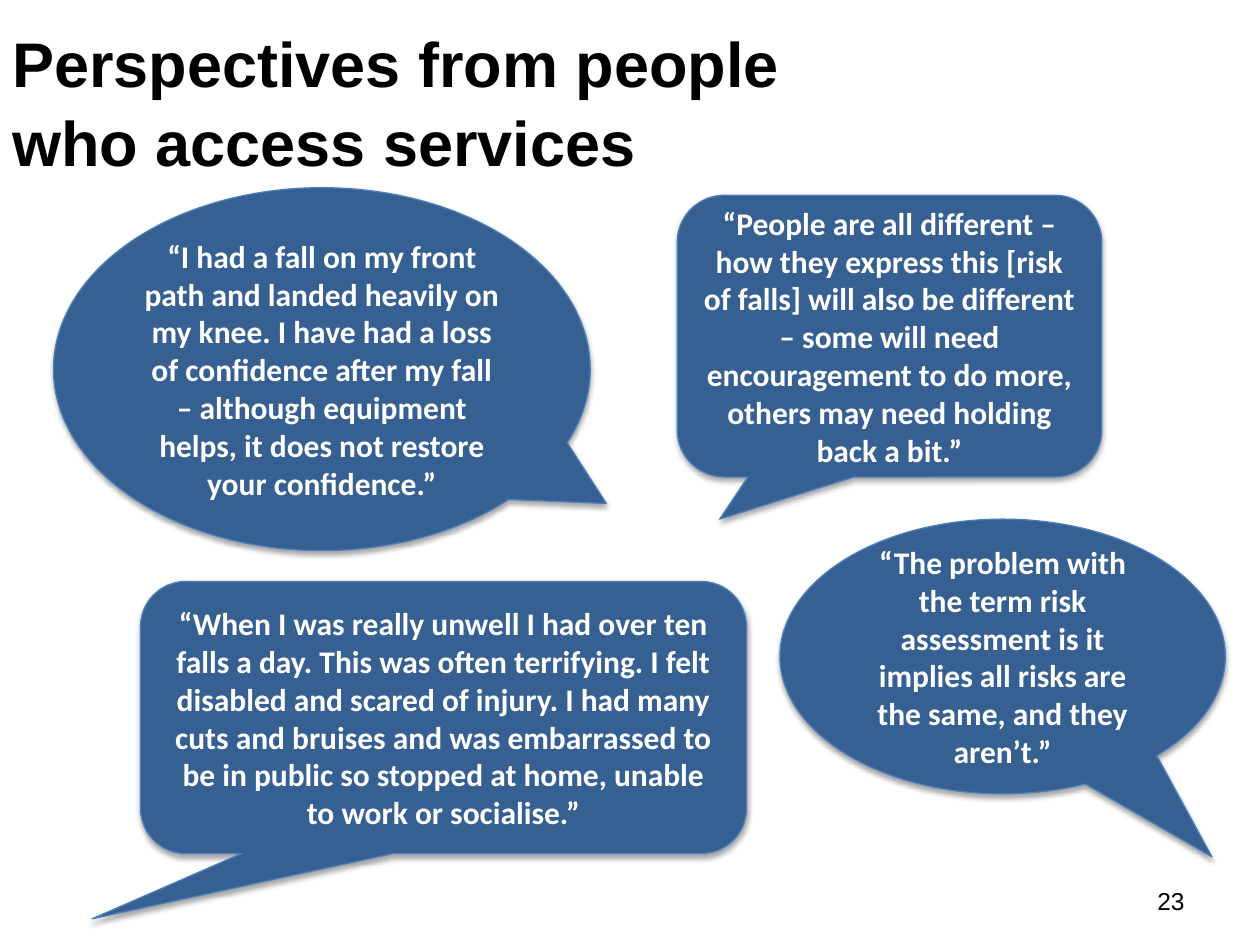
from dataclasses import dataclass

from lxml.etree import SubElement
from pptx import Presentation
from pptx.dml.color import RGBColor
from pptx.enum.shapes import MSO_SHAPE
from pptx.enum.text import MSO_ANCHOR, PP_ALIGN
from pptx.oxml.ns import qn
from pptx.util import Pt


@dataclass(frozen=True)
class Theme:
    ink: str = "000000"
    bubble: str = "376092"
    outline: str = "4B7EBC"
    quote: str = "FFFFFF"
    heading_font: str = "Arial"
    quote_font: str = "Calibri"
    title_size: float = 36
    quote_size: float = 18
    number_size: float = 14
    outline_width: float = 0.75


THEME = Theme()
OVAL = MSO_SHAPE.OVAL_CALLOUT
ROUNDED = MSO_SHAPE.ROUNDED_RECTANGULAR_CALLOUT

TITLE = "Perspectives from people who access services"
TITLE_AREA = (0, 12.24, 519.84, 90)
PAGE_NUMBER = "23"
NUMBER_AREA = (516.24, 500.4, 167.76, 28.8)

# Preset, area in points, tail tip as a share of the size from the centre, quote
BUBBLES = [
    (OVAL, (30.6, 107.28, 306.72, 207.36), (0.53, 0.37),
     "“I had a fall on my front path and landed heavily on my knee. I have had a "
     "loss of confidence after my fall – although equipment helps, it does not "
     "restore your confidence.”"),
    (OVAL, (445.68, 296.64, 254.52, 156.96), (0.47, 0.73),
     "“The problem with the term risk assessment is it implies all risks are the "
     "same, and they aren’t.”"),
    (ROUNDED, (387, 111.6, 242.64, 160.92), (-0.4, 0.65),
     "“People are all different – how they express this [risk of falls] will also "
     "be different – some will need encouragement to do more, others may need "
     "holding back a bit.”"),
    (ROUNDED, (80.28, 332.28, 346.32, 155.52), (-0.58, 0.74),
     "“When I was really unwell I had over ten falls a day. This was often "
     "terrifying. I felt disabled and scared of injury. I had many cuts and "
     "bruises and was embarrassed to be in public so stopped at home, unable to "
     "work or socialise.”"),
]


def points(area):
    return [Pt(length) for length in area]


def write(box, text, font, size, color, bold=False, align=PP_ALIGN.LEFT):
    frame = box.text_frame
    frame.word_wrap = True
    frame.vertical_anchor = MSO_ANCHOR.MIDDLE
    paragraph = frame.paragraphs[0]
    paragraph.alignment = align
    span = paragraph.add_run()
    span.text = text
    span.font.name = font
    span.font.size = Pt(size)
    span.font.bold = bold
    span.font.color.rgb = RGBColor.from_string(color)
    return paragraph


def add_soft_shadow(shape):
    """Give the shape a faint black shadow straight below it."""
    shape.shadow.inherit = False
    effects = shape._element.spPr.find(qn("a:effectLst"))
    shadow = SubElement(effects, qn("a:outerShdw"), blurRad=str(Pt(3.1)),
                        dist=str(Pt(1.8)), dir="5400000", rotWithShape="0")
    color = SubElement(shadow, qn("a:srgbClr"), val=THEME.ink)
    SubElement(color, qn("a:alpha"), val="35000")


def add_bubble(page, preset, area, tail, quote):
    bubble = page.shapes.add_shape(preset, *points(area))
    for index, offset in enumerate(tail):
        bubble.adjustments[index] = offset
    bubble.fill.solid()
    bubble.fill.fore_color.rgb = RGBColor.from_string(THEME.bubble)
    bubble.line.color.rgb = RGBColor.from_string(THEME.outline)
    bubble.line.width = Pt(THEME.outline_width)
    add_soft_shadow(bubble)
    write(bubble, quote, THEME.quote_font, THEME.quote_size, THEME.quote,
          bold=True, align=PP_ALIGN.CENTER)


def main():
    deck = Presentation()
    deck.slide_width, deck.slide_height = Pt(720), Pt(540)
    page = deck.slides.add_slide(deck.slide_layouts[6])

    title = page.shapes.add_textbox(*points(TITLE_AREA))
    heading = write(title, TITLE, THEME.heading_font, THEME.title_size,
                    THEME.ink, bold=True)
    heading.line_spacing = 1.05

    number = page.shapes.add_textbox(*points(NUMBER_AREA))
    write(number, PAGE_NUMBER, THEME.heading_font, THEME.number_size,
          THEME.ink, align=PP_ALIGN.RIGHT)

    for bubble in BUBBLES:
        add_bubble(page, *bubble)
    deck.save("out.pptx")


if __name__ == "__main__":
    main()
